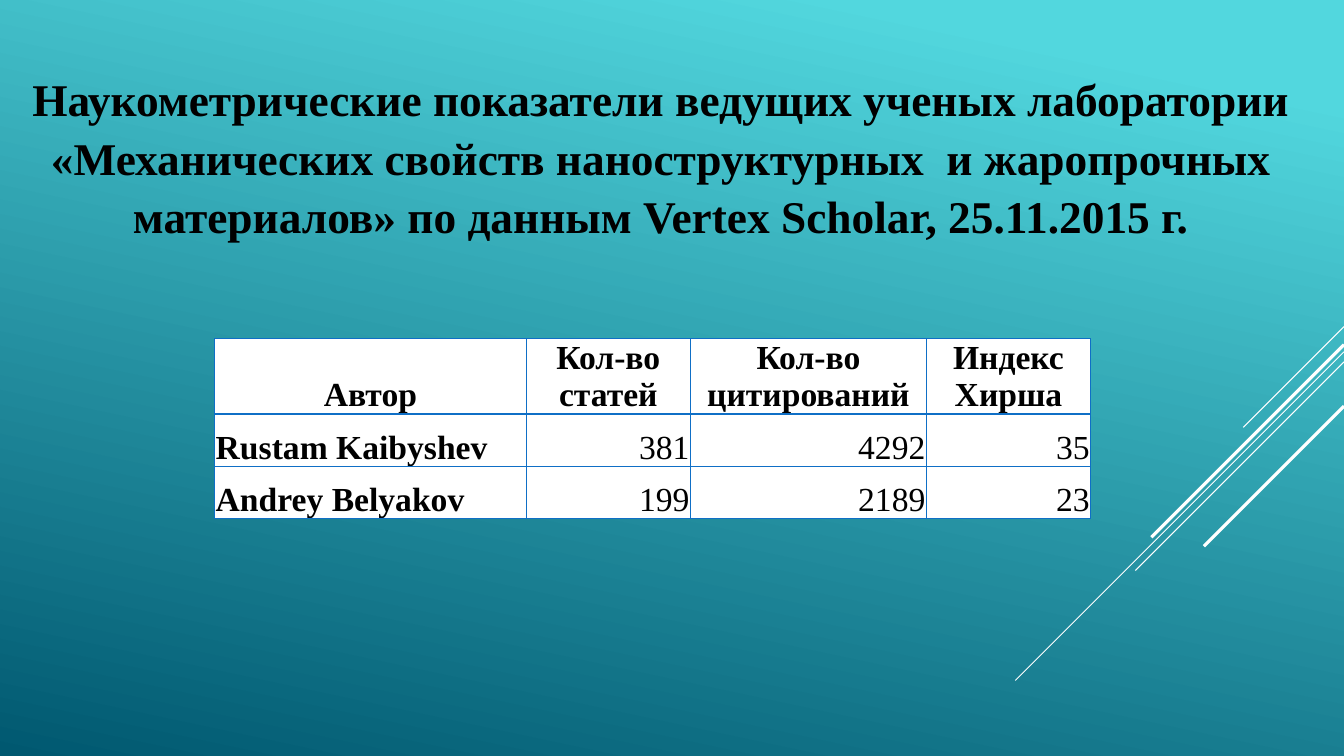
from lxml.etree import SubElement
from pptx import Presentation
from pptx.dml.color import RGBColor
from pptx.enum.shapes import MSO_CONNECTOR as Connector
from pptx.enum.text import MSO_ANCHOR as Anchor, MSO_AUTO_SIZE as AutoSize, PP_ALIGN as Align
from pptx.oxml import parse_xml
from pptx.oxml.ns import nsdecls, qn
from pptx.util import Inches, Pt

WHITE = RGBColor(0xFF, 0xFF, 0xFF)
BLACK = RGBColor(0x00, 0x00, 0x00)
AQUA = RGBColor(0x52, 0xD7, 0xDE)
DEEP_TEAL = RGBColor(0x00, 0x58, 0x70)
BORDER_BLUE = RGBColor(0x0F, 0x6F, 0xC6)

COLUMNS, ROWS = 133.33, 75
TITLE = (
    "Наукометрические показатели ведущих ученых лаборатории "
    "«Механических свойств наноструктурных  и жаропрочных материалов» "
    "по данным Vertex Scholar, 25.11.2015 г."
)
AUTHORS = [
    ["Автор", "Кол-во статей", "Кол-во цитирований", "Индекс Хирша"],
    ["Rustam Kaibyshev", "381", "4292", "35"],
    ["Andrey Belyakov", "199", "2189", "23"],
]
DIAGONALS = [
    (32.4, 10, 0.75),
    (34.9, 32.6, 0.75),
    (35.9, 20.7, 0.75),
    (34.2, 19.1, 2.25),
    (40.3, 13.9, 2.25),
]


class Slide:
    font = "Times New Roman"

    def __init__(self, deck):
        self.width, self.height = deck.slide_width, deck.slide_height
        self.page = deck.slides.add_slide(deck.slide_layouts[5])

    def across(self, columns):
        return round(self.width * columns / COLUMNS)

    def down(self, rows):
        return round(self.height * rows / ROWS)

    def background(self, start, end, angle):
        fill = self.page.background.fill
        fill.gradient()
        fill.gradient_angle = 360 - angle
        for stop, (position, color) in zip(fill.gradient_stops, (start, end)):
            stop.position = position
            stop.color.rgb = color

    def add_text(self, para, text, size, bold, align):
        para.alignment = align
        span = para.add_run()
        span.text = text
        span.font.name = self.font
        span.font.size = Pt(size)
        span.font.bold = bold
        span.font.color.rgb = BLACK

    def title(self, text, left, top, width, height):
        box = self.page.shapes.title
        box.left, box.top = self.across(left), self.down(top)
        box.width, box.height = self.across(width), self.down(height)
        frame = box.text_frame
        frame.word_wrap = True
        frame.auto_size = AutoSize.NONE
        frame.vertical_anchor = Anchor.MIDDLE
        para = frame.paragraphs[0]
        para.line_spacing = 1.08
        self.add_text(para, text, 32.4, True, Align.CENTER)

    def diagonal(self, top, run, weight):
        line = self.page.shapes.add_connector(
            Connector.STRAIGHT,
            self.across(COLUMNS), self.down(top),
            self.across(COLUMNS - run), self.down(top + run),
        )
        line.line.color.rgb = WHITE
        line.line.width = Pt(weight)
        SubElement(line._element.spPr, qn("a:effectLst"))

    def border(self, cell):
        properties = cell._tc.get_or_add_tcPr()
        for index, side in enumerate(("lnL", "lnR", "lnT", "lnB")):
            properties.insert(index, parse_xml(
                f'<a:{side} {nsdecls("a")} w="{Pt(1)}"><a:solidFill>'
                f'<a:srgbClr val="{BORDER_BLUE}"/></a:solidFill></a:{side}>'
            ))

    def cell(self, cell, text, bold, align):
        cell.fill.solid()
        cell.fill.fore_color.rgb = WHITE
        cell.vertical_anchor = Anchor.BOTTOM
        cell.margin_left = cell.margin_right = cell.margin_top = Inches(0.01)
        cell.margin_bottom = 0
        self.border(cell)
        self.add_text(cell.text_frame.paragraphs[0], text, 24, bold, align)

    def table(self, values, left, top, widths, heights):
        table = self.page.shapes.add_table(
            len(heights), len(widths), self.across(left), self.down(top),
            self.across(sum(widths)), self.down(sum(heights)),
        ).table
        for column, width in zip(table.columns, widths):
            column.width = self.across(width)
        for row, height in zip(table.rows, heights):
            row.height = self.down(height)
        for r, record in enumerate(values):
            for c, text in enumerate(record):
                align = Align.CENTER if r == 0 else Align.LEFT if c == 0 else Align.RIGHT
                self.cell(table.cell(r, c), text, r == 0 or c == 0, align)


def main():
    deck = Presentation()
    deck.slide_width, deck.slide_height = Inches(13.33), Inches(7.5)
    slide = Slide(deck)
    slide.background((0.1, AQUA), (1, DEEP_TEAL), 102)
    for top, run, weight in DIAGONALS:
        slide.diagonal(top, run, weight)
    slide.title(TITLE, 0, 7.1, 131.1, 16.5)
    slide.table(AUTHORS, 21.3, 33.6, [30.9, 16.3, 23.4, 16.3], [5.4, 5.2, 5.2])
    deck.save("out.pptx")


if __name__ == "__main__":
    main()
